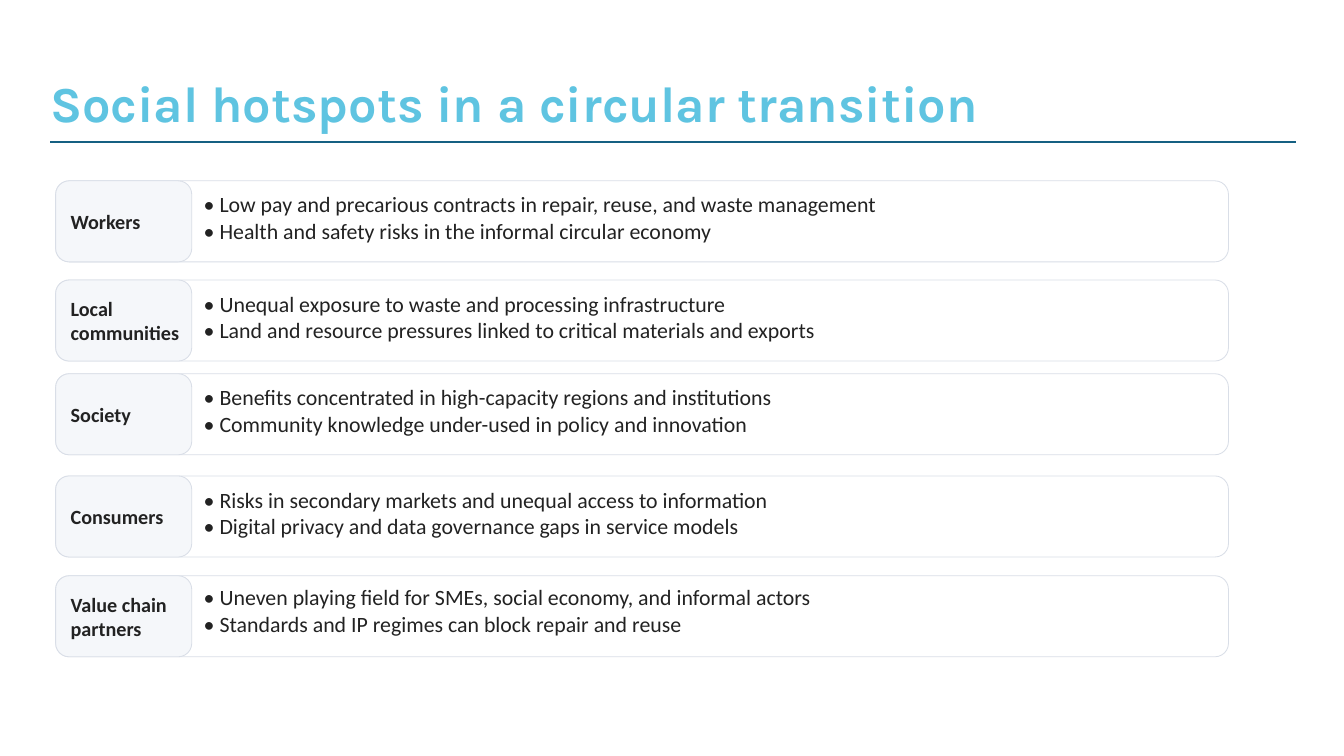
from pptx import Presentation
from pptx import util as u
from pptx.dml.color import RGBColor
from pptx.enum import shapes, text

PX = 9144  # EMU per px, 100 px to the inch
COLORS = {"title": "5FC4E1", "rule": "156082", "ink": "222222",
          "border": "D9DEE7", "card": "FFFFFF", "tab": "F5F7FA"}
TITLE = {"name": "Karla", "size": u.Pt(60), "bold": True}
LABEL = {"name": "Calibri", "size": u.Pt(24), "bold": True}
POINT = {"name": "Calibri", "size": u.Pt(26), "bold": False}

CARD_LEFT, CARD_WIDTH, CARD_HEIGHT = 92, 1939, 134
TAB_WIDTH = 225

# group, top of card, top of points, points
HOTSPOTS = [
    ("Workers", 299, 311,
     ["Low pay and precarious contracts in repair, reuse, and waste management",
      "Health and safety risks in the informal circular economy"]),
    ("Local communities", 463, 475,
     ["Unequal exposure to waste and processing infrastructure",
      "Land and resource pressures linked to critical materials and exports"]),
    ("Society", 618, 630,
     ["Benefits concentrated in high-capacity regions and institutions",
      "Community knowledge under-used in policy and innovation"]),
    ("Consumers", 787, 799,
     ["Risks in secondary markets and unequal access to information",
      "Digital privacy and data governance gaps in service models"]),
    ("Value chain partners", 952, 961,
     ["Uneven playing field for SMEs, social economy, and informal actors",
      "Standards and IP regimes can block repair and reuse"]),
]

prs = Presentation()
prs.slide_width, prs.slide_height = 2222 * PX, 1250 * PX
slide = prs.slides.add_slide(prs.slide_layouts[6])


def add_text(box, lines, style, color, anchor=text.MSO_ANCHOR.TOP):
    frame = slide.shapes.add_textbox(*(n * PX for n in box)).text_frame
    frame.word_wrap = True
    frame.vertical_anchor = anchor
    frame.text = "\n".join(lines)
    for paragraph in frame.paragraphs:
        paragraph.font.color.rgb = RGBColor.from_string(COLORS[color])
        for key, value in style.items():
            setattr(paragraph.font, key, value)
    return frame


# Title and rule
rule = slide.shapes.add_connector(shapes.MSO_CONNECTOR.STRAIGHT,
                                  83 * PX, 235 * PX, 2142 * PX, 235 * PX)
rule.line.color.rgb = RGBColor.from_string(COLORS["rule"])
rule.line.width = u.Pt(1.5)
rule._element.spPr.add_effectLst() if hasattr(rule._element.spPr, "add_effectLst") \
    else rule._element.spPr.get_or_add_effectLst() if hasattr(rule._element.spPr, "get_or_add_effectLst") \
    else None
title = add_text((73, 126, 1667, 85), ["Social hotspots in a circular transition"],
                 TITLE, "title")
title.paragraphs[0].line_spacing = 0.9

# One card per group: outline, tab, label and points
for group, top, points_top, points in HOTSPOTS:
    for width, fill in ((CARD_WIDTH, "card"), (TAB_WIDTH, "tab")):
        panel = slide.shapes.add_shape(
            shapes.MSO_SHAPE.ROUNDED_RECTANGLE,
            CARD_LEFT * PX, top * PX, width * PX, CARD_HEIGHT * PX)
        panel.shadow.inherit = False
        panel.fill.solid()
        panel.fill.fore_color.rgb = RGBColor.from_string(COLORS[fill])
        panel.line.color.rgb = RGBColor.from_string(COLORS["border"])
        panel.line.width = u.Pt(1)
    label = add_text((107, top, 200, CARD_HEIGHT), [group], LABEL, "ink",
                     text.MSO_ANCHOR.MIDDLE)
    label.margin_right = 0
    add_text((327, points_top, 1692, 114), [f"• {point}" for point in points],
             POINT, "ink")

prs.save("out.pptx")
